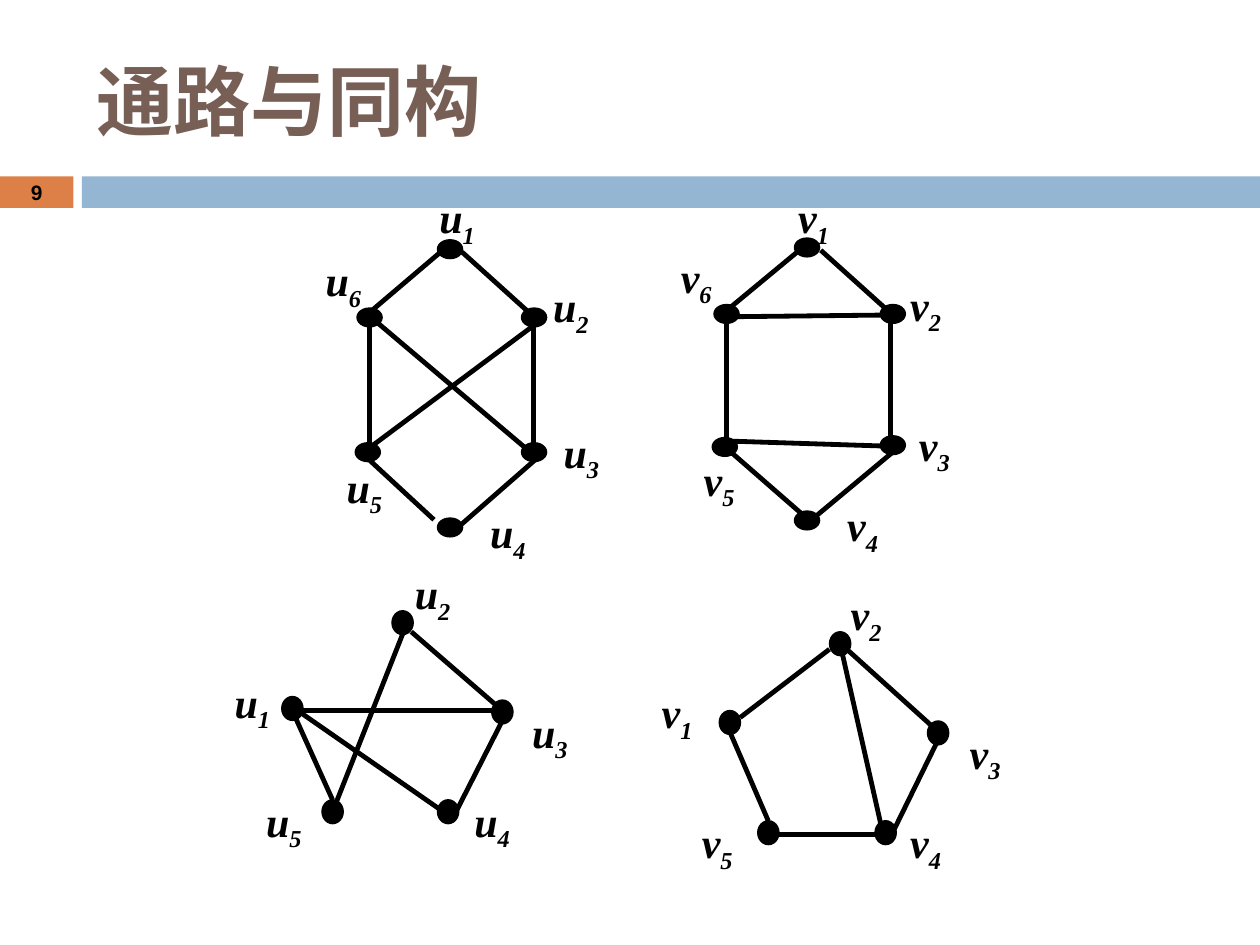
from lxml import etree
from pptx import Presentation
from pptx.dml import color
from pptx.enum import shapes, text
from pptx.oxml import ns
from pptx.util import Pt

BLACK = "000000"
HEXAGON_NODE = (14.4, 10.8)
PENTAGON_NODE = (12.2, 13.7)

GRAPHS = [
    {
        "letter": "u", "origin": (178, 106), "node_size": HEXAGON_NODE,
        "nodes": [(72, 31), (120, 70), (120, 147), (72, 190), (25, 147), (26, 70)],
        "labels": [(66, 0), (131, 51), (137, 134), (95, 180), (13, 154), (1, 36)],
        "edges": [(35, 71, 75, 37), (127, 80, 33, 150), (127, 80, 127, 149),
                  (127, 154, 36, 77), (33, 80, 33, 149), (86, 38, 127, 75),
                  (30, 154, 70, 191), (83, 196, 131, 154)],
    },
    {
        "letter": "v", "origin": (382, 106), "node_size": HEXAGON_NODE,
        "nodes": [(72, 30), (121, 68), (121, 143), (72, 186), (25, 144), (26, 68)],
        "labels": [(67, 0), (131, 50), (136, 130), (95, 176), (13, 150), (0, 34)],
        "edges": [(35, 70, 76, 36), (126, 149, 33, 146), (127, 78, 127, 145),
                  (126, 74, 36, 75), (33, 78, 33, 145), (87, 37, 127, 73),
                  (33, 150, 80, 191), (83, 190, 131, 150)],
    },
    {
        "letter": "u", "origin": (127, 321), "node_size": PENTAGON_NODE,
        "nodes": [(34, 77), (97, 28), (154, 79), (123, 136), (57, 136)],
        "labels": [(0, 62), (103, 0), (170, 79), (137, 130), (18, 130)],
        "edges": [(61, 148, 106, 34), (43, 85, 128, 144), (40, 85, 63, 136),
                  (108, 40, 160, 85), (157, 85, 37, 85), (160, 91, 131, 148)],
    },
    {
        "letter": "v", "origin": (371, 333), "node_size": PENTAGON_NODE,
        "nodes": [(40, 73), (103, 28), (159, 79), (129, 136), (62, 136)],
        "labels": [(0, 56), (108, 0), (176, 79), (142, 130), (23, 130)],
        "edges": [(68, 144, 134, 144), (46, 85, 68, 136), (114, 39, 165, 85),
                  (103, 38, 52, 77), (165, 90, 137, 147), (110, 39, 133, 141)],
    },
]


def paint(color_format, hex_color):
    color_format.rgb = color.RGBColor.from_string(hex_color)


def format_run(run, font_name, size, hex_color, italic=False):
    run.font.name = font_name
    run.font.size = Pt(size)
    run.font.bold = True
    run.font.italic = italic
    paint(run.font.color, hex_color)


def add_filled(container, kind, box, hex_color, line_width=0):
    shape = container.shapes.add_shape(kind, *map(Pt, box))
    shape.shadow.inherit = False
    shape.fill.solid()
    paint(shape.fill.fore_color, hex_color)
    if line_width:
        paint(shape.line.color, hex_color)
        shape.line.width = Pt(line_width)
    else:
        shape.line.fill.background()
    return shape


def add_edge(group, start_x, start_y, end_x, end_y):
    edge = group.shapes.add_connector(
        shapes.MSO_CONNECTOR.STRAIGHT, Pt(start_x), Pt(start_y), Pt(end_x), Pt(end_y))
    paint(edge.line.color, BLACK)
    edge.line.width = Pt(2.75)
    etree.SubElement(edge._element.spPr, ns.qn("a:effectLst"))


def add_label(group, left, top, letter, number):
    label = group.shapes.add_textbox(Pt(left), Pt(top), Pt(45), Pt(35))
    frame = label.text_frame
    frame.word_wrap = True
    frame.auto_size = text.MSO_AUTO_SIZE.SHAPE_TO_FIT_TEXT
    paragraph = frame.paragraphs[0]
    for content in (letter, str(number)):
        run = paragraph.add_run()
        run.text = content
        format_run(run, "Times New Roman", 24, BLACK, italic=True)
    run._r.get_or_add_rPr().set("baseline", "-25000")


def add_graph(slide, letter, origin, node_size, nodes, labels, edges):
    left, top = origin
    group = slide.shapes.add_group_shape()
    for start_x, start_y, end_x, end_y in edges:
        add_edge(group, left + start_x, top + start_y, left + end_x, top + end_y)
    for x, y in nodes:
        add_filled(group, shapes.MSO_SHAPE.OVAL, (left + x, top + y, *node_size), BLACK, 0.75)
    for number, (x, y) in enumerate(labels, start=1):
        add_label(group, left + x, top + y, letter, number)


def add_band(slide, left, top, width, height):
    number_width, gap = 42, 4.8
    bar_left = left + number_width + gap
    rectangle = shapes.MSO_SHAPE.RECTANGLE
    page = add_filled(slide, rectangle, (left, top, number_width, height), "DD8047")
    add_filled(slide, rectangle, (bar_left, top, left + width - bar_left, height), "94B6D2")
    frame = page.text_frame
    frame.margin_top = frame.margin_bottom = 0
    frame.vertical_anchor = text.MSO_ANCHOR.MIDDLE
    frame.text = "9"
    paragraph = frame.paragraphs[0]
    paragraph.alignment = text.PP_ALIGN.CENTER
    format_run(paragraph.runs[0], "Arial", 11.9, BLACK)


def set_title(slide, left, top, width, height):
    title = slide.shapes.title
    title.left, title.top, title.width, title.height = map(Pt, (left, top, width, height))
    frame = title.text_frame
    frame.text = "通路与同构"
    frame.auto_size = text.MSO_AUTO_SIZE.NONE
    frame.vertical_anchor = text.MSO_ANCHOR.MIDDLE
    paragraph = frame.paragraphs[0]
    paragraph.alignment = text.PP_ALIGN.LEFT
    format_run(paragraph.runs[0], "Calibri", 44, "775F55")


def main():
    presentation = Presentation()
    presentation.slide_width, presentation.slide_height = Pt(720), Pt(540)
    slide = presentation.slides.add_slide(presentation.slide_layouts[5])
    set_title(slide, 48, 18, 642, 78)
    add_band(slide, 0, 100.8, 720, 18)
    for graph in GRAPHS:
        add_graph(slide, **graph)
    presentation.save("out.pptx")


if __name__ == "__main__":
    main()
